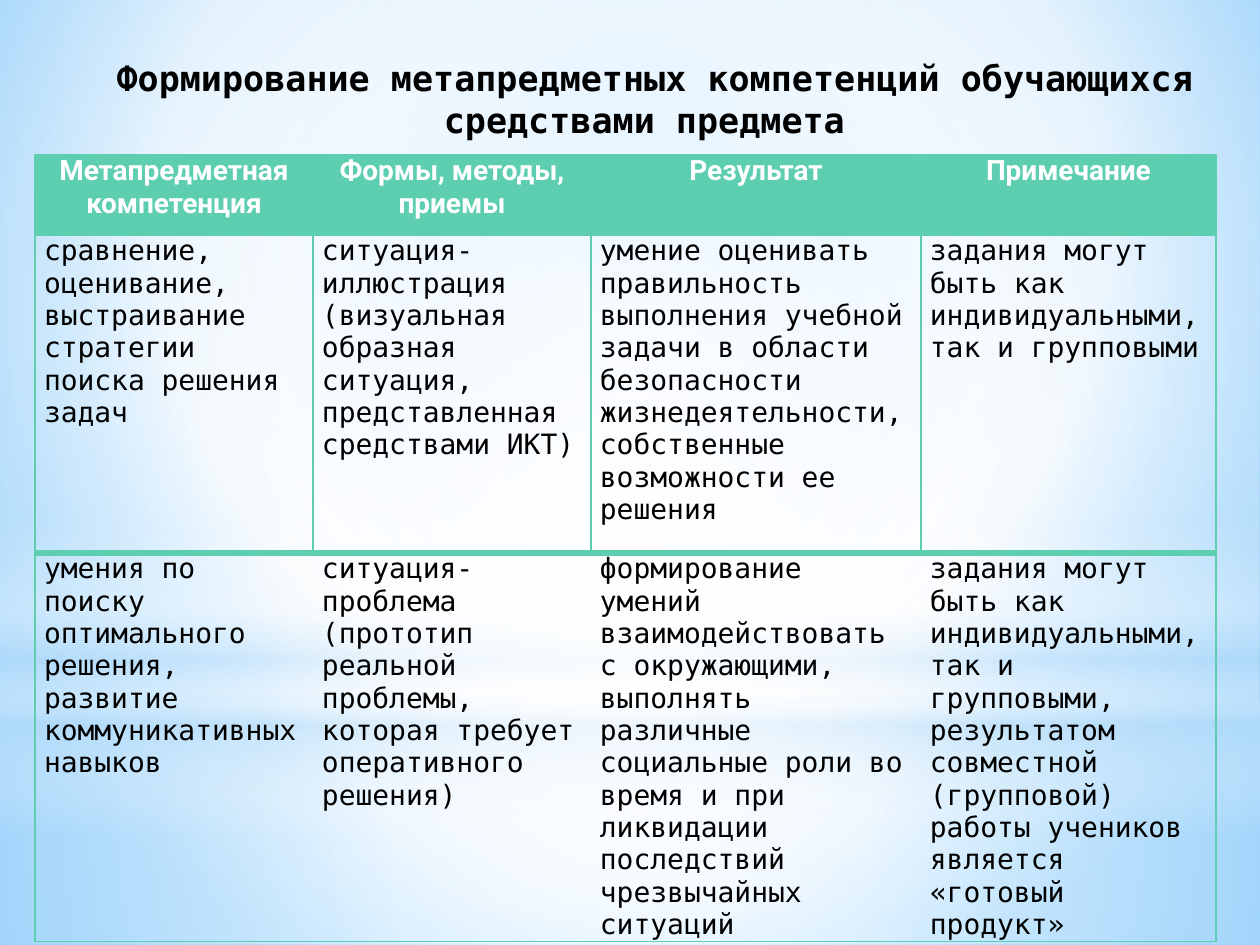
from dataclasses import dataclass
from typing import Optional

import pptx
import pptx.dml.color
import pptx.enum.shapes
import pptx.enum.text
import pptx.oxml.ns
import pptx.util
from lxml import etree

EMU_PER_PX = 914400 / 126
qn = pptx.oxml.ns.qn
SHAPES = pptx.enum.shapes.MSO_SHAPE
ALIGN = pptx.enum.text.PP_ALIGN


@dataclass(frozen=True)
class Theme:
    accent: str = "5DCEAF"
    text: str = "000000"
    header_text: str = "FFFFFF"
    header_font: str = "Roboto"
    body_font: str = "DejaVu Sans Mono"
    title_size: int = 20
    table_size: int = 16
    thin: float = 0.75
    thick: float = 4


THEME = Theme()


@dataclass(frozen=True)
class Stop:
    position: int
    color: str
    opacity: int = 100


@dataclass(frozen=True)
class Gradient:
    stops: tuple[Stop, ...]
    focus: Optional[tuple[int, int, int, int]] = (50, 50, 50, 50)  # None: vertical


@dataclass(frozen=True)
class Glow:
    shape_type: SHAPES
    box: tuple[int, int, int, int]
    gradient: Gradient


@dataclass(frozen=True)
class Borders:
    left: Optional[float] = None
    right: Optional[float] = None
    top: Optional[float] = None
    bottom: Optional[float] = None


BACKGROUND = Gradient((Stop(0, "9ED5FF"), Stop(60, "FFFFFF"), Stop(100, "5BB9FF")),
                      (20, 10, 20, 60))
GLOWS = (
    Glow(SHAPES.RECTANGLE, (0, 703, 1260, 242), Gradient(
        (Stop(0, "FFFFFF", 91), Stop(37, "FFFFFF", 76), Stop(100, "B4DCFA", 79)))),
    Glow(SHAPES.RECTANGLE, (0, 0, 1260, 703), Gradient(
        (Stop(0, "FFFFFF", 89), Stop(48, "FFFFFF", 62), Stop(100, "B4DCFA", 79)))),
    Glow(SHAPES.RECTANGLE, (0, 519, 1260, 315), Gradient(
        (Stop(0, "FFFFFF", 0), Stop(29, "FFFFFF", 30), Stop(45, "B4DCFA", 40),
         Stop(55, "FFFFFF", 26), Stop(65, "B4DCFA", 60), Stop(100, "FFFFFF", 0)), None)),
    Glow(SHAPES.OVAL, (0, 221, 1260, 703), Gradient(
        (Stop(0, "FFFFFF"), Stop(56, "FFFFFF", 0)))),
)

TITLE = "Формирование метапредметных компетенций обучающихся средствами предмета "
COLUMN_WIDTHS = (278, 278, 330, 295)
ROW_HEIGHTS = (80, 318, 376)
ROWS = (
    ("Метапредметная компетенция", "Формы, методы, приемы", "Результат", "Примечание"),
    ("сравнение, оценивание, выстраивание стратегии поиска решения задач",
     "ситуация-иллюстрация (визуальная образная ситуация, представленная средствами ИКТ)",
     "умение оценивать правильность выполнения учебной\n"
     "задачи в области безопасности жизнедеятельности, собственные возможности ее решения",
     "задания могут быть как индивидуальными, так и групповыми"),
    ("умения по поиску оптимального решения, развитие коммуникативных навыков",
     "ситуация-проблема (прототип реальной проблемы, которая требует оперативного решения)",
     "формирование умений взаимодействовать с окружающими, выполнять различные "
     "социальные роли во время и при ликвидации последствий чрезвычайных ситуаций",
     "задания могут быть как индивидуальными, так и групповыми, результатом совместной "
     "(групповой) работы учеников является «готовый продукт»"),
)


def px(length: int) -> int:
    return round(length * EMU_PER_PX)


def rgb(color: str) -> pptx.dml.color.RGBColor:
    return pptx.dml.color.RGBColor.from_string(color)


def set_gradient(properties, gradient: Gradient) -> None:
    """Replace the solid fill of a properties element with a gradient."""
    fill = etree.Element(qn("a:gradFill"), rotWithShape="1")
    stop_list = etree.SubElement(fill, qn("a:gsLst"))
    for stop in gradient.stops:
        entry = etree.SubElement(stop_list, qn("a:gs"), pos=str(stop.position * 1000))
        color = etree.SubElement(entry, qn("a:srgbClr"), val=stop.color)
        if stop.opacity < 100:
            etree.SubElement(color, qn("a:alpha"), val=str(stop.opacity * 1000))
    if gradient.focus is None:
        etree.SubElement(fill, qn("a:lin"), ang="5400000", scaled="0")
    else:
        circle = etree.SubElement(fill, qn("a:path"), {"path": "circle"})
        sides = {side: str(value * 1000) for side, value in zip("ltrb", gradient.focus)}
        etree.SubElement(circle, qn("a:fillToRect"), sides)
    properties.replace(properties.find(qn("a:solidFill")), fill)


def draw_glow(slide: pptx.slide.Slide, glow: Glow) -> None:
    shape = slide.shapes.add_shape(glow.shape_type, *map(px, glow.box))
    shape.shadow.inherit = False
    shape.line.fill.background()
    shape.fill.solid()
    set_gradient(shape.element.spPr, glow.gradient)


def style_paragraph(paragraph, size: int, font: str, color: str, bold: bool, align) -> None:
    paragraph.alignment = align
    paragraph.font.size = pptx.util.Pt(size)
    paragraph.font.name = font
    paragraph.font.bold = bold
    paragraph.font.color.rgb = rgb(color)


def draw_title(slide: pptx.slide.Slide) -> None:
    title = slide.shapes.title
    title.left, title.top, title.width, title.height = map(px, (84, 42, 1142, 105))
    frame = title.text_frame
    frame.text = TITLE
    frame.word_wrap = True
    frame.auto_size = pptx.enum.text.MSO_AUTO_SIZE.NONE
    frame.vertical_anchor = pptx.enum.text.MSO_ANCHOR.BOTTOM
    style_paragraph(frame.paragraphs[0], THEME.title_size, THEME.body_font,
                    THEME.text, True, ALIGN.CENTER)
    title.element.getparent().append(title.element)  # in front of the glows


def set_borders(cell, borders: Borders) -> None:
    properties = cell._tc.get_or_add_tcPr()
    for tag, width in (("a:lnL", borders.left), ("a:lnR", borders.right),
                       ("a:lnT", borders.top), ("a:lnB", borders.bottom)):
        line = etree.SubElement(properties, qn(tag))
        if width is None:
            etree.SubElement(line, qn("a:noFill"))
        else:
            line.set("w", str(pptx.util.Pt(width)))
            fill = etree.SubElement(line, qn("a:solidFill"))
            etree.SubElement(fill, qn("a:srgbClr"), val=THEME.accent)


def cell_borders(row: int, column: int) -> Borders:
    """Outer frame, inner verticals in the middle row, thick rule under it."""
    thin, thick = THEME.thin, THEME.thick
    inner = thin if row == 1 else None
    return Borders(left=thin if column == 0 else inner,
                   right=thin if column == len(COLUMN_WIDTHS) - 1 else inner,
                   top=thick if row == 2 else thin,
                   bottom=thick if row == 1 else thin)


def draw_table(slide: pptx.slide.Slide) -> None:
    table = slide.shapes.add_table(len(ROW_HEIGHTS), len(COLUMN_WIDTHS), px(35), px(155),
                                   px(sum(COLUMN_WIDTHS)), px(sum(ROW_HEIGHTS))).table
    table.first_row = table.horz_banding = False
    for column, width in zip(table.columns, COLUMN_WIDTHS):
        column.width = px(width)
    for row_index, (row, height) in enumerate(zip(table.rows, ROW_HEIGHTS)):
        row.height = px(height)
        header = row_index == 0
        for column_index, cell in enumerate(row.cells):
            cell.text = ROWS[row_index][column_index]
            cell.margin_left = cell.margin_right = px(9)
            cell.margin_top = cell.margin_bottom = 0
            set_borders(cell, cell_borders(row_index, column_index))
            if header:
                cell.fill.solid()
                cell.fill.fore_color.rgb = rgb(THEME.accent)
            else:
                cell.fill.background()
            for paragraph in cell.text_frame.paragraphs:
                style_paragraph(paragraph, THEME.table_size,
                                THEME.header_font if header else THEME.body_font,
                                THEME.header_text if header else THEME.text,
                                header, ALIGN.CENTER if header else ALIGN.LEFT)


def main() -> None:
    presentation = pptx.Presentation()
    presentation.slide_width, presentation.slide_height = px(1260), px(945)
    slide = presentation.slides.add_slide(presentation.slide_layouts[5])

    # Background and its soft light
    slide.background.fill.solid()
    set_gradient(slide.element.find(".//" + qn("p:bgPr")), BACKGROUND)
    for glow in GLOWS:
        draw_glow(slide, glow)

    # Heading and competence table
    draw_title(slide)
    draw_table(slide)
    presentation.save("out.pptx")


if __name__ == "__main__":
    main()
